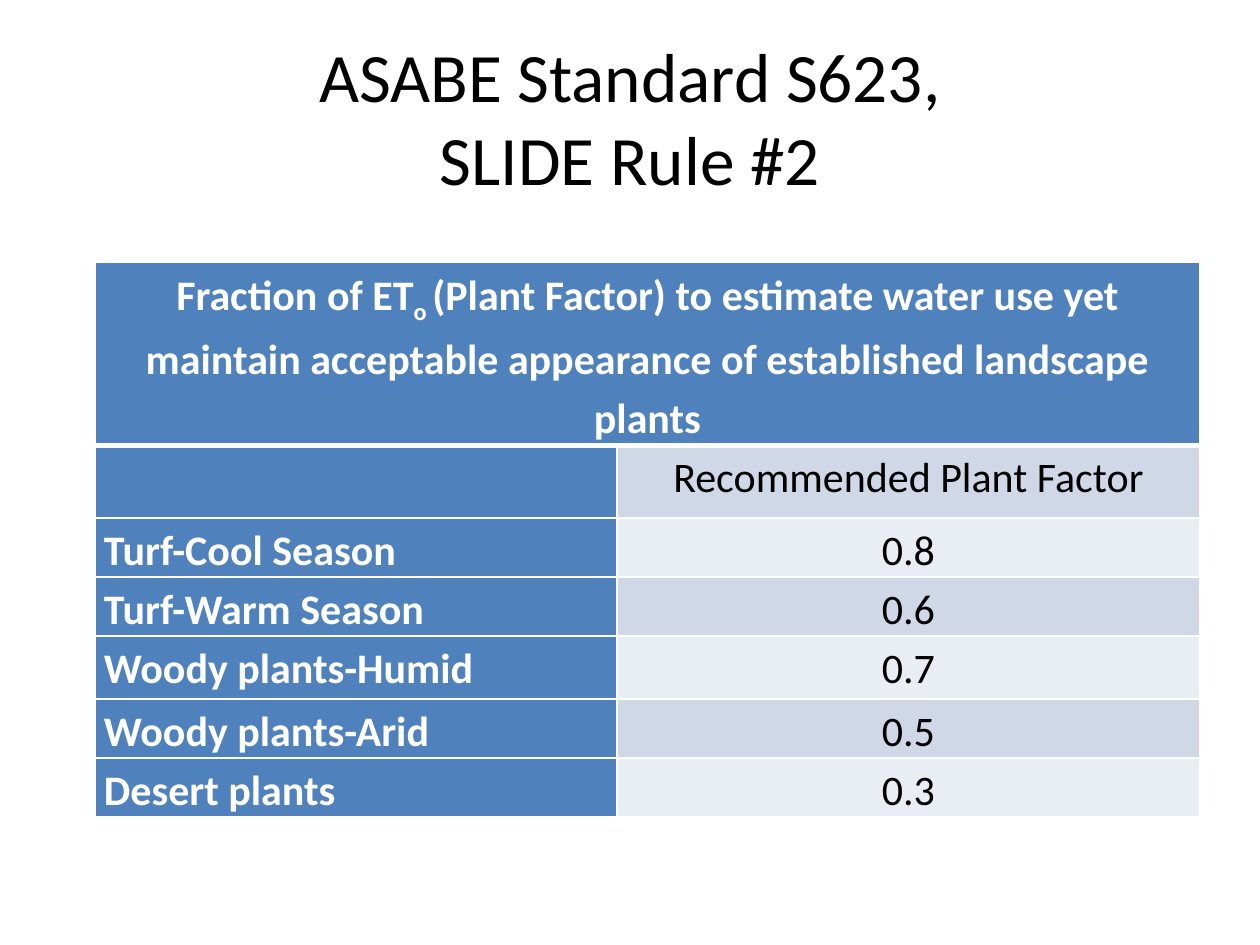
from lxml import etree
from pptx import Presentation
from pptx import util as u
from pptx.dml import color
from pptx.enum import text
from pptx.oxml import ns

FONT = "Calibri"
BLUE, WHITE, BLACK = "4F81BD", "FFFFFF", "000000"
BANDS = ["D0D8E8", "E9EDF4"]
COLUMNS = [522, 583]
ROWS = [180, 73, 59, 59, 63, 59, 59]
HEADING = [
    ("Fraction of ET", 0),
    ("o ", -25000),
    ("(Plant Factor) to estimate water use yet maintain "
     "acceptable appearance of established landscape plants", 0),
]
FACTORS = [
    ("", "Recommended Plant Factor"),
    ("Turf-Cool Season", "0.8"),
    ("Turf-Warm Season", "0.6"),
    ("Woody plants-Humid", "0.7"),
    ("Woody plants-Arid", "0.5"),
    ("Desert plants", "0.3"),
]


def px(length):
    return u.Inches(length / 126)


def rgb(value):
    return color.RGBColor.from_string(value)


def format_font(font, size, ink, bold=False):
    font.name = FONT
    font.size = u.Pt(size)
    font.bold = bold
    font.color.rgb = rgb(ink)


def add_title(page, wording):
    title = page.shapes.title
    title.left, title.top, title.width, title.height = map(px, (63, 38, 1134, 157))
    frame = title.text_frame
    frame.text = wording
    frame.auto_size = text.MSO_AUTO_SIZE.NONE
    frame.vertical_anchor = text.MSO_ANCHOR.MIDDLE
    para = frame.paragraphs[0]
    para.alignment = text.PP_ALIGN.CENTER
    for span in para.runs:
        format_font(span.font, 39.6, BLACK)


def add_border(cell, side, width):
    properties = cell._tc.get_or_add_tcPr()
    line = etree.SubElement(properties, ns.qn(f"a:ln{side}"), w=str(u.Pt(width)))
    fill = etree.SubElement(line, ns.qn("a:solidFill"))
    etree.SubElement(fill, ns.qn("a:srgbClr"), val=WHITE)


def style_cell(cell, fill, bottom=1):
    for side in "LRT":
        add_border(cell, side, 1)
    add_border(cell, "B", bottom)
    cell.fill.solid()
    cell.fill.fore_color.rgb = rgb(fill)
    cell.margin_left = cell.margin_right = px(9)
    cell.margin_top = cell.margin_bottom = 0


def write_cell(cell, pieces, ink, bold, centred):
    para = cell.text_frame.paragraphs[0]
    para.alignment = text.PP_ALIGN.CENTER if centred else text.PP_ALIGN.LEFT
    para.line_spacing = 1.15
    for wording, baseline in pieces:
        span = para.add_run()
        span.text = wording
        format_font(span.font, 24, ink, bold)
        if baseline:
            span.font._element.set("baseline", str(baseline))


def add_factor_table(page):
    frame = page.shapes.add_table(
        len(ROWS), len(COLUMNS), px(95), px(262), px(sum(COLUMNS)), px(sum(ROWS)))
    table = frame.table
    for column, width in zip(table.columns, COLUMNS):
        column.width = px(width)
    for row, height in zip(table.rows, ROWS):
        row.height = px(height)

    heading = table.cell(0, 0)
    heading.merge(table.cell(0, 1))
    for column in range(len(COLUMNS)):
        style_cell(table.cell(0, column), BLUE, bottom=3)
    write_cell(heading, HEADING, WHITE, True, True)

    for index, (plant, factor) in enumerate(FACTORS):
        label, value = table.rows[index + 1].cells
        style_cell(label, BLUE)
        style_cell(value, BANDS[index % 2])
        if plant:
            write_cell(label, [(plant, 0)], WHITE, True, False)
        write_cell(value, [(factor, 0)], BLACK, False, True)
    table.cell(1, 1).text_frame.paragraphs[0].space_after = u.Pt(10)


def main():
    deck = Presentation()
    deck.slide_width, deck.slide_height = px(1260), px(945)
    page = deck.slides.add_slide(deck.slide_layouts[5])
    add_title(page, "ASABE Standard S623,\vSLIDE Rule #2")
    add_factor_table(page)
    deck.save("out.pptx")


if __name__ == "__main__":
    main()
